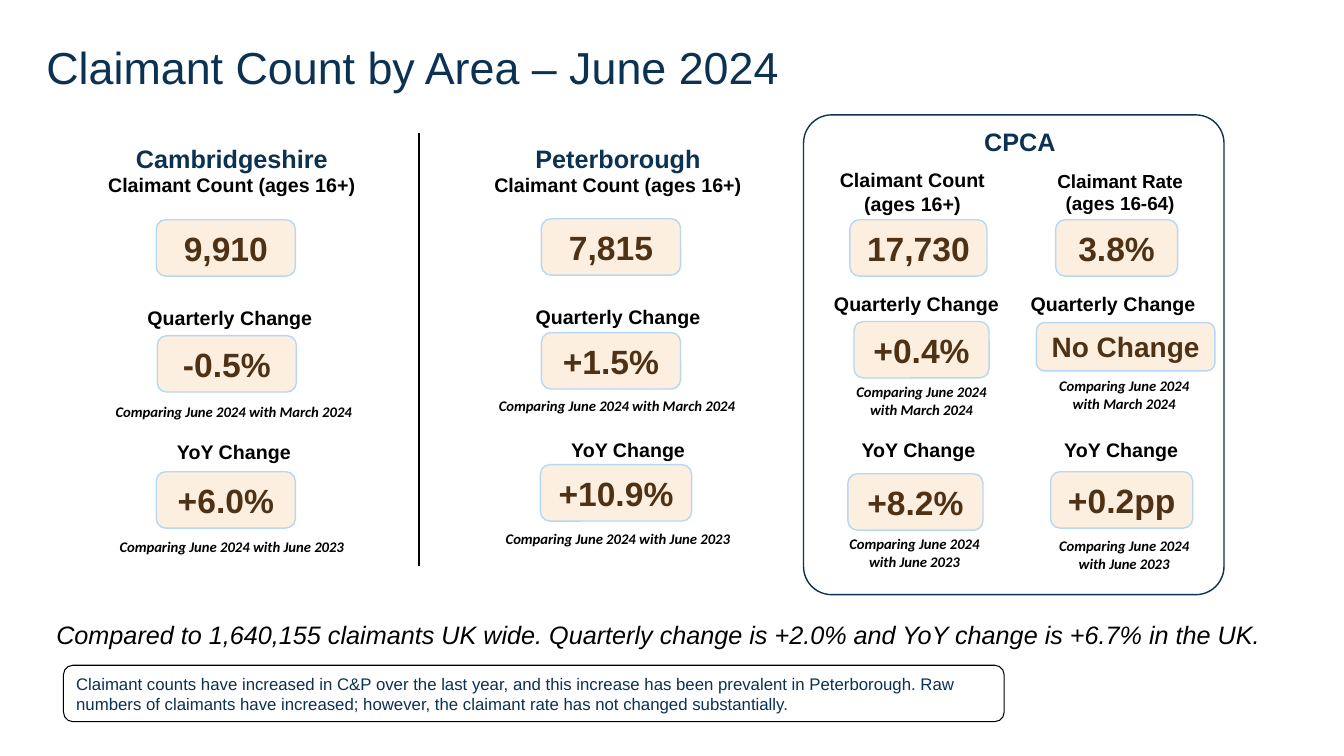
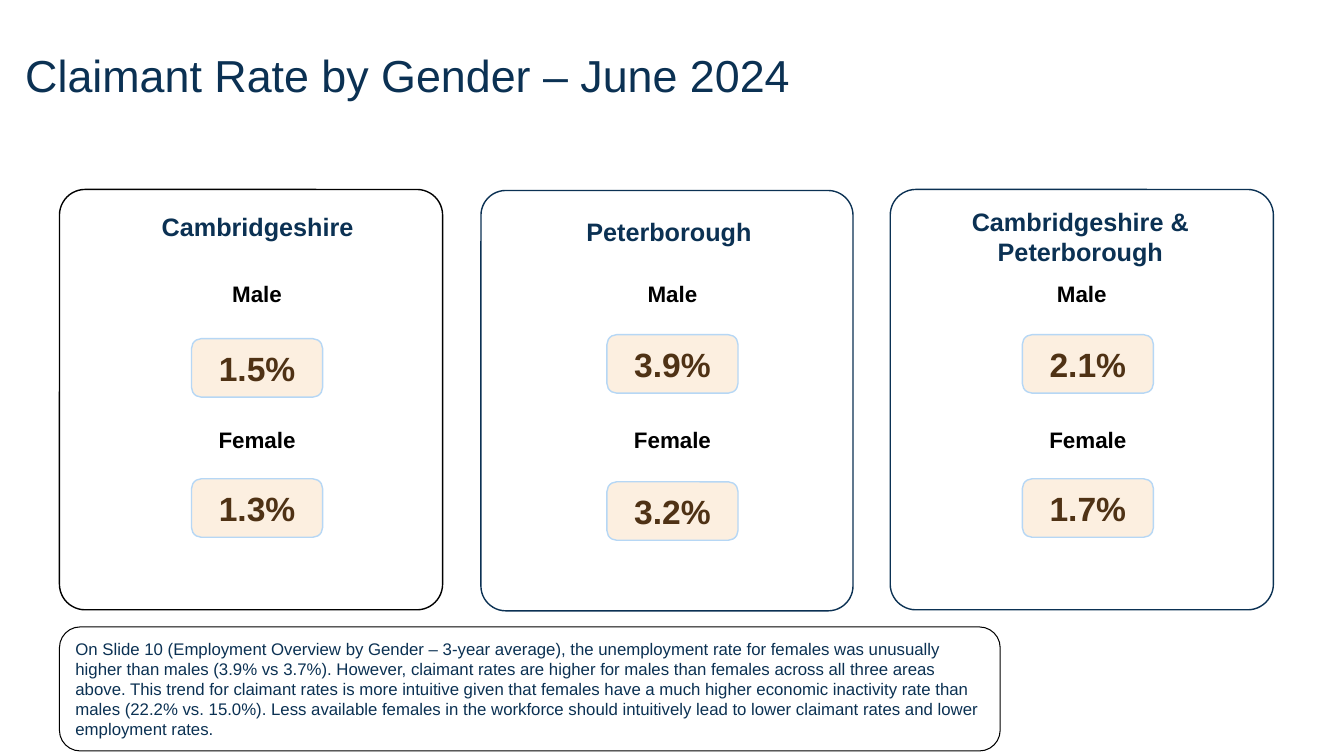
from dataclasses import dataclass, replace

from lxml.etree import SubElement
from pptx import Presentation
from pptx.dml.color import RGBColor
from pptx.enum.shapes import MSO_CONNECTOR, MSO_SHAPE
from pptx.enum.text import MSO_ANCHOR, PP_ALIGN
from pptx.oxml.ns import qn
from pptx.util import Pt

PX = 9144  # 100 px to the inch
TITLE_ONLY = 5


def px(length):
    return round(length * PX)


@dataclass(frozen=True)
class Style:
    size: float
    color: str
    bold: bool = False
    italic: bool = False
    font: str = "Arial"


class Theme:
    navy = "0B3153"
    black = "000000"
    brown = "4F3215"
    chip_fill = "F9D1A6"
    chip_line = "B6D7F5"
    chip_opacity = 34
    panel_corner = 0.067
    title = Style(32, navy)
    heading = Style(18, navy, bold=True)
    label = Style(14, black, bold=True)
    gender = Style(16, black, bold=True)
    value = Style(24, brown, bold=True)
    note = Style(10.5, black, bold=True, italic=True, font="Calibri")
    summary = Style(18, black, italic=True)
    comment = Style(12, navy)


@dataclass(frozen=True)
class Box:
    left: int
    top: int
    width: int
    height: int

    @property
    def center(self):
        return self.left + self.width // 2

    def around(self, shift, top, width, height):
        """Box centred in this one, moved sideways by shift, top px down."""
        return Box(self.center + shift - width // 2, self.top + top, width, height)

    def emu(self):
        return [px(side) for side in (self.left, self.top, self.width, self.height)]


@dataclass(frozen=True)
class Metric:
    """Label, value chip and note; each place is (sideways shift, top)."""
    label: str
    label_at: tuple
    value: str
    value_at: tuple
    chip: tuple = (138, 56)
    note: str = ""
    note_at: tuple = (0, 0)
    heading: str = ""
    label_style: Style = Theme.label
    value_style: Style = Theme.value


def write(frame, lines, align=PP_ALIGN.LEFT):
    """Fill a text frame with (text, style) paragraphs."""
    frame.word_wrap = True
    for index, (text, style) in enumerate(lines):
        para = frame.add_paragraph() if index else frame.paragraphs[0]
        para.text = text
        para.alignment = align
        font = para.font
        font.name, font.size = style.font, Pt(style.size)
        font.bold, font.italic = style.bold, style.italic
        font.color.rgb = RGBColor.from_string(style.color)


def styled(text, style):
    return [(line, style) for line in text.split("\n")] if text else []


def add_text(page, box, lines, align=PP_ALIGN.CENTER):
    write(page.shapes.add_textbox(*box.emu()).text_frame, lines, align)


def add_centered(page, box, place, width, lines):
    height = 10 + round(sum(style.size for _, style in lines) * 1.2 / 0.72)
    add_text(page, box.around(*place, width, height), lines)


def add_round(page, box, line_color, line_width, corner=None):
    shape = page.shapes.add_shape(MSO_SHAPE.ROUNDED_RECTANGLE, *box.emu())
    shape.shadow.inherit = False
    shape.fill.background()
    shape.line.color.rgb = RGBColor.from_string(line_color)
    shape.line.width = Pt(line_width)
    if corner is not None:
        shape.adjustments[0] = corner
    shape.text_frame.vertical_anchor = MSO_ANCHOR.MIDDLE
    return shape


def add_panel(page, box, line_color=Theme.navy):
    add_round(page, box, line_color, 1, Theme.panel_corner)


def add_chip(page, box, text, style):
    chip = add_round(page, box, Theme.chip_line, 1)
    chip.fill.solid()
    chip.fill.fore_color.rgb = RGBColor.from_string(Theme.chip_fill)
    color = chip.fill._xPr.find(qn("a:solidFill"))[0]
    SubElement(color, qn("a:alpha"), val=str(Theme.chip_opacity * 1000))
    write(chip.text_frame, [(text, style)], PP_ALIGN.CENTER)


def add_comment(page, box, text):
    comment = add_round(page, box, Theme.black, 0.75)
    write(comment.text_frame, [(text, Theme.comment)])


def add_metrics(page, box, metrics, text_width):
    for metric in metrics:
        lines = styled(metric.heading, Theme.heading) + styled(metric.label, metric.label_style)
        add_centered(page, box, metric.label_at, text_width, lines)
        add_chip(page, box.around(*metric.value_at, *metric.chip), metric.value, metric.value_style)
        if metric.note:
            add_centered(page, box, metric.note_at, text_width, styled(metric.note, Theme.note))


def add_divider(page, x, top, bottom):
    line = page.shapes.add_connector(MSO_CONNECTOR.STRAIGHT, px(x), px(top), px(x), px(bottom))
    line.line.color.rgb = RGBColor.from_string(Theme.black)
    line.line.width = Pt(1.5)
    SubElement(line._element.spPr, qn("a:effectLst"))


def add_page(deck, title, box):
    page = deck.slides.add_slide(deck.slide_layouts[TITLE_ONLY])
    holder = page.shapes.title
    holder.left, holder.top, holder.width, holder.height = box.emu()
    frame = holder.text_frame
    frame.margin_left = frame.margin_top = frame.margin_right = frame.margin_bottom = 0
    frame.vertical_anchor = MSO_ANCHOR.BOTTOM
    write(frame, [(title, Theme.title)])
    frame.paragraphs[0].line_spacing = 0.9
    return page


QUARTER, YEAR = "Quarterly Change", "YoY Change"
SINCE_MARCH = "Comparing June 2024 with March 2024"
SINCE_LAST_JUNE = "Comparing June 2024 with June 2023"


def two_lines(note):
    return note.replace(" with", "\nwith")


def add_area_columns(page, top):
    count = "Claimant Count (ages 16+)"
    cambridgeshire = [
        Metric(count, (0, 0), "9,910", (-6, 81), heading="Cambridgeshire"),
        Metric(QUARTER, (-2, 162), "-0.5%", (-5, 196), note=SINCE_MARCH, note_at=(2, 258)),
        Metric(YEAR, (2, 295), "+6.0%", (-6, 331), note=SINCE_LAST_JUNE, note_at=(0, 392)),
    ]
    peterborough = [
        Metric(count, (0, 0), "7,815", (-7, 80), heading="Peterborough"),
        Metric(QUARTER, (0, 161), "+1.5%", (-7, 193), note=SINCE_MARCH, note_at=(-1, 252)),
        Metric(YEAR, (10, 293), "+10.9%", (-2, 324), (150, 56), SINCE_LAST_JUNE, (0, 384)),
    ]
    for left, metrics in ((77, cambridgeshire), (460, peterborough)):
        add_metrics(page, Box(left, top, 306, 430), metrics, 300)


def add_combined_panel(page, box):
    add_panel(page, box)
    add_centered(page, box, (6, 6), 347, [("CPCA", Theme.heading)])
    march, last_june = two_lines(SINCE_MARCH), two_lines(SINCE_LAST_JUNE)
    count = [
        Metric("Claimant Count\n(ages 16+)", (-2, 0), "17,730", (4, 56), (136, 56)),
        Metric(QUARTER, (2, 123), "+0.4%", (7, 157), (134, 56), march, (7, 213)),
        Metric(YEAR, (4, 268), "+8.2%", (1, 308), (134, 56), last_june, (0, 364)),
    ]
    rate = [
        Metric("Claimant Rate\n(ages 16-64)", (-1, 1), "3.8%", (-5, 56), (121, 56),
               label_style=replace(Theme.label, size=13.5)),
        Metric(QUARTER, (-8, 123), "No Change", (4, 158), (177, 48), march, (3, 207),
               value_style=replace(Theme.value, size=20)),
        Metric(YEAR, (0, 268), "+0.2pp", (0, 306), (141, 56), last_june, (3, 366)),
    ]
    for offset, metrics in ((10, count), (215, rate)):
        column = Box(box.left + offset, box.top + 48, 200, 420)
        add_metrics(page, column, metrics, 200)


def area_page(deck):
    page = add_page(deck, "Claimant Count by Area – June 2024", Box(46, 33, 1242, 60))
    add_area_columns(page, 137)
    add_divider(page, 416, 132, 562)
    add_combined_panel(page, Box(797, 114, 417, 476))
    summary = ("Compared to 1,640,155 claimants UK wide. Quarterly change is +2.0% "
               "and YoY change is +6.7% in the UK.")
    add_text(page, Box(46, 609, 1241, 40), [(summary, Theme.summary)], PP_ALIGN.LEFT)
    add_comment(page, Box(63, 660, 933, 56), (
        "Claimant counts have increased in C&P over the last year, and this increase has been "
        "prevalent in Peterborough. Raw numbers of claimants have increased; however, the "
        "claimant rate has not changed substantially."))


def add_gender_panel(page, box, line_color, heading, heading_at, rates):
    """Rates are (label, label place, value, value place)."""
    add_panel(page, box, line_color)
    add_centered(page, box, heading_at, 341, [(heading, Theme.heading)])
    metrics = [Metric(*rate, chip=(130, 58), label_style=Theme.gender) for rate in rates]
    add_metrics(page, box, metrics, 130)


def gender_page(deck):
    page = add_page(deck, "Claimant Rate by Gender – June 2024", Box(25, 41, 964, 60))
    add_gender_panel(
        page, Box(59, 188, 380, 417), Theme.black, "Cambridgeshire", (6, 17),
        [("Male", (6, 85), "1.5%", (6, 148)), ("Female", (6, 230), "1.3%", (6, 287))])
    add_gender_panel(
        page, Box(477, 189, 369, 417), Theme.navy, "Peterborough", (2, 21),
        [("Male", (6, 84), "3.9%", (6, 143)), ("Female", (6, 229), "3.2%", (6, 289))])
    add_gender_panel(
        page, Box(883, 188, 380, 417), Theme.navy, "Cambridgeshire & Peterborough", (-2, 12),
        [("Male", (0, 85), "2.1%", (6, 144)), ("Female", (6, 230), "1.7%", (6, 287))])
    add_comment(page, Box(59, 622, 933, 123), (
        "On Slide 10 (Employment Overview by Gender – 3-year average), the unemployment rate "
        "for females was unusually higher than males (3.9% vs 3.7%). However, claimant rates "
        "are higher for males than females across all three areas above. This trend for "
        "claimant rates is more intuitive given that females have a much higher economic "
        "inactivity rate than males (22.2% vs. 15.0%). Less available females in the workforce "
        "should intuitively lead to lower claimant rates and lower employment rates."))


def main():
    deck = Presentation()
    deck.slide_width, deck.slide_height = px(1333), px(750)
    area_page(deck)
    gender_page(deck)
    deck.save("out.pptx")


if __name__ == "__main__":
    main()
